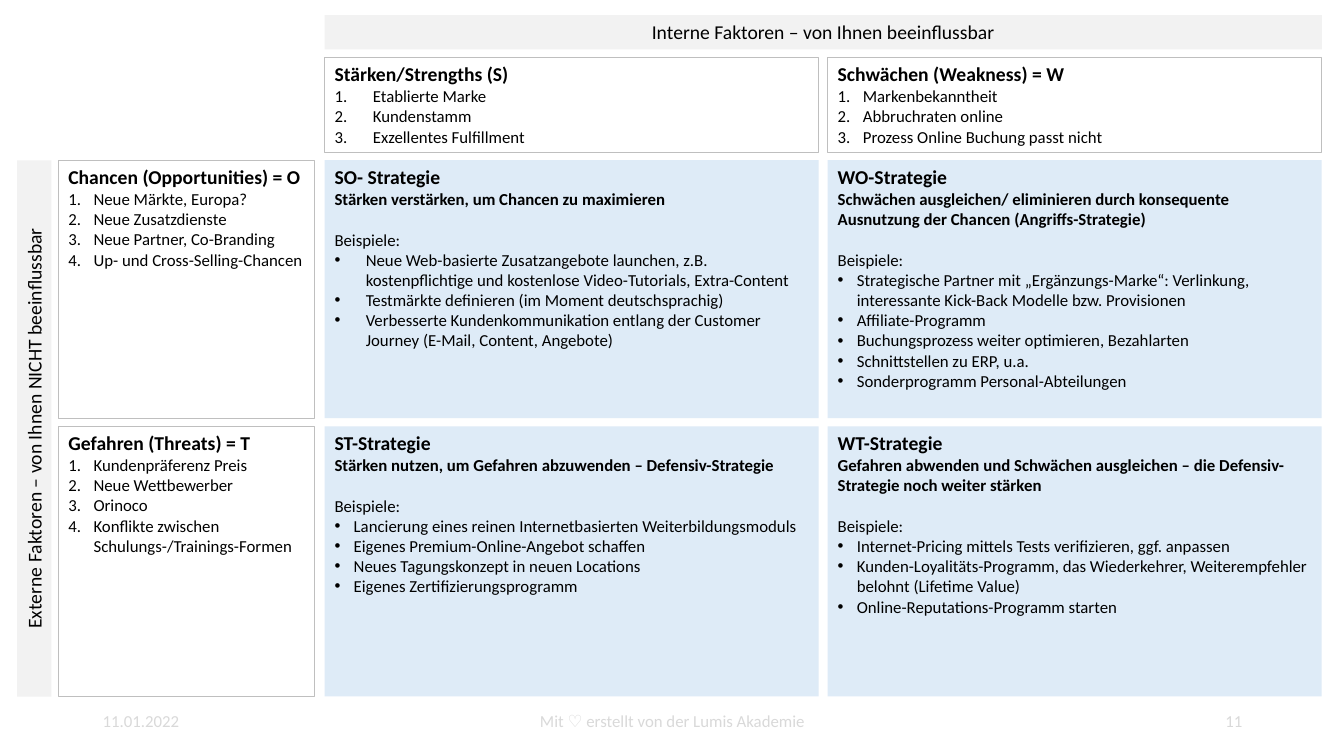
from lxml import etree
from pptx import Presentation
from pptx.dml.color import RGBColor
from pptx.enum.shapes import MSO_SHAPE
from pptx.enum.text import MSO_ANCHOR, PP_ALIGN
from pptx.oxml.ns import qn
from pptx.util import Inches, Pt

RECT = MSO_SHAPE.RECTANGLE
TOP, MIDDLE = MSO_ANCHOR.TOP, MSO_ANCHOR.MIDDLE
LEFT, CENTER, RIGHT = PP_ALIGN.LEFT, PP_ALIGN.CENTER, PP_ALIGN.RIGHT
WHITE = RGBColor(0xFF, 0xFF, 0xFF)
BLACK = RGBColor(0, 0, 0)
GRAY = RGBColor(0xF2, 0xF2, 0xF2)
EDGE = RGBColor(0xBF, 0xBF, 0xBF)
BLUE = RGBColor(0xDE, 0xEB, 0xF7)
PALE = RGBColor(0xD9, 0xD9, 0xD9)
FONT = "Calibri"

# Content: (row, column, heading, indent, items)
FACTORS = [
    (0, 1, "Stärken/Strengths (S)", 0.38,
     ["Etablierte Marke", "Kundenstamm", "Exzellentes Fulfillment"]),
    (0, 2, "Schwächen (Weakness) = W", 0.25,
     ["Markenbekanntheit", "Abbruchraten online",
      "Prozess Online Buchung passt nicht"]),
    (1, 0, "Chancen (Opportunities) = O", 0.25,
     ["Neue Märkte, Europa?", "Neue Zusatzdienste",
      "Neue Partner, Co-Branding", "Up- und Cross-Selling-Chancen"]),
    (2, 0, "Gefahren (Threats) = T", 0.25,
     ["Kundenpräferenz Preis", "Neue Wettbewerber", "Orinoco",
      "Konflikte zwischen Schulungs-/Trainings-Formen"]),
]
# Content: (row, column, heading, aim, indent, items)
PLANS = [
    (1, 1, "SO- Strategie", "Stärken verstärken, um Chancen zu maximieren", 0.31,
     ["Neue Web-basierte Zusatzangebote launchen, z.B. kostenpflichtige "
      "und kostenlose Video-Tutorials, Extra-Content",
      "Testmärkte definieren (im Moment deutschsprachig)",
      "Verbesserte Kundenkommunikation entlang der Customer Journey "
      "(E-Mail, Content, Angebote)"]),
    (1, 2, "WO-Strategie",
     "Schwächen ausgleichen/ eliminieren durch konsequente "
     "Ausnutzung der Chancen (Angriffs-Strategie)", 0.19,
     ["Strategische Partner mit „Ergänzungs-Marke“: Verlinkung, "
      "interessante Kick-Back Modelle bzw. Provisionen",
      "Affiliate-Programm", "Buchungsprozess weiter optimieren, Bezahlarten",
      "Schnittstellen zu ERP, u.a.", "Sonderprogramm Personal-Abteilungen"]),
    (2, 1, "ST-Strategie",
     "Stärken nutzen, um Gefahren abzuwenden – Defensiv-Strategie", 0.19,
     ["Lancierung eines reinen Internetbasierten Weiterbildungsmoduls",
      "Eigenes Premium-Online-Angebot schaffen",
      "Neues Tagungskonzept in neuen Locations",
      "Eigenes Zertifizierungsprogramm"]),
    (2, 2, "WT-Strategie",
     "Gefahren abwenden und Schwächen ausgleichen – die "
     "Defensiv-Strategie noch weiter stärken", 0.19,
     ["Internet-Pricing mittels Tests verifizieren, ggf. anpassen",
      "Kunden-Loyalitäts-Programm, das Wiederkehrer, Weiterempfehler "
      "belohnt (Lifetime Value)",
      "Online-Reputations-Programm starten"]),
]
INNER = "Interne Faktoren – von Ihnen beeinflussbar"
OUTER = "Externe Faktoren – von Ihnen NICHT beeinflussbar"
# Content: (left, width, alignment, text)
FOOTER = [
    (0.92, 3, LEFT, "11.01.2022"),
    (4.42, 4.5, CENTER, "Mit ♡ erstellt von der Lumis Akademie"),
    (9.42, 3, RIGHT, "11"),
]

# Grid: (start, size) of each column and row
COLS = [(0.58, 2.54), (3.22, 4.9), (8.21, 4.9)]
ROWS = [(0.57, 0.94), (1.59, 2.56), (4.23, 2.68)]
BAR = 0.34
BAR_TOP, BAR_LEFT = 0.15, 0.17

deck = Presentation()
deck.slide_width, deck.slide_height = Inches(13.33), Inches(7.5)
slide = deck.slides.add_slide(deck.slide_layouts[6])


def add_box(left, top, width, height, fill, edge=None):
    box = slide.shapes.add_shape(
        RECT, Inches(left), Inches(top), Inches(width), Inches(height))
    box.shadow.inherit = False
    box.fill.solid()
    box.fill.fore_color.rgb = fill
    if edge:
        box.line.color.rgb = edge
        box.line.width = Pt(0.75)
    else:
        box.line.fill.background()
    box.text_frame.word_wrap = True
    box.text_frame.vertical_anchor = TOP
    return box


def style(para, size, bold=False, color=BLACK, align=LEFT):
    para.alignment = align
    for run in para.runs:
        run.font.name, run.font.size = FONT, Pt(size)
        run.font.bold, run.font.color.rgb = bold, color


def add_line(frame, text, bold=False):
    para = frame.add_paragraph()
    para.text = text
    style(para, 12, bold)
    return para


def add_list(frame, items, indent, tag, **mark):
    for item in items:
        props = add_line(frame, item)._p.get_or_add_pPr()
        props.set("marL", str(Inches(indent)))
        props.set("indent", str(-Inches(indent)))
        etree.SubElement(props, qn("a:buFont"), typeface="Arial")
        etree.SubElement(props, qn(tag), **mark)


def add_cell(row, col, head, fill, edge=None):
    (left, width), (top, height) = COLS[col], ROWS[row]
    frame = add_box(left, top, width, height, fill, edge).text_frame
    frame.text = head
    style(frame.paragraphs[0], 14, True)
    return frame


# Factor boxes with numbered lists
for row, col, head, indent, items in FACTORS:
    frame = add_cell(row, col, head, WHITE, EDGE)
    frame.margin_right = Inches(0.05)
    add_list(frame, items, indent, "a:buAutoNum", type="arabicPeriod")

# Strategy boxes with bullets
for row, col, head, aim, indent, items in PLANS:
    frame = add_cell(row, col, head, BLUE)
    add_line(frame, aim, True)
    add_line(frame, "Beispiele:").space_before = Pt(14.6)
    add_list(frame, items, indent, "a:buChar", char="•")

# Header bars; the side bar is turned about its centre
right = sum(COLS[-1])
span = sum(ROWS[-1]) - ROWS[1][0]
middle = ROWS[1][0] + span / 2
top_bar = add_box(COLS[1][0], BAR_TOP, right - COLS[1][0], BAR, GRAY)
side_bar = add_box(BAR_LEFT + BAR / 2 - span / 2, middle - BAR / 2,
                   span, BAR, GRAY)
side_bar.rotation = 270
for bar, text in ((top_bar, INNER), (side_bar, OUTER)):
    bar.text_frame.text = text
    style(bar.text_frame.paragraphs[0], 14, align=CENTER)

# Footer
for left, width, align, text in FOOTER:
    note = slide.shapes.add_textbox(
        Inches(left), Inches(6.95), Inches(width), Inches(0.4))
    frame = note.text_frame
    frame.word_wrap = True
    frame.vertical_anchor = MIDDLE
    frame.text = text
    style(frame.paragraphs[0], 12, color=PALE, align=align)

deck.save("out.pptx")
